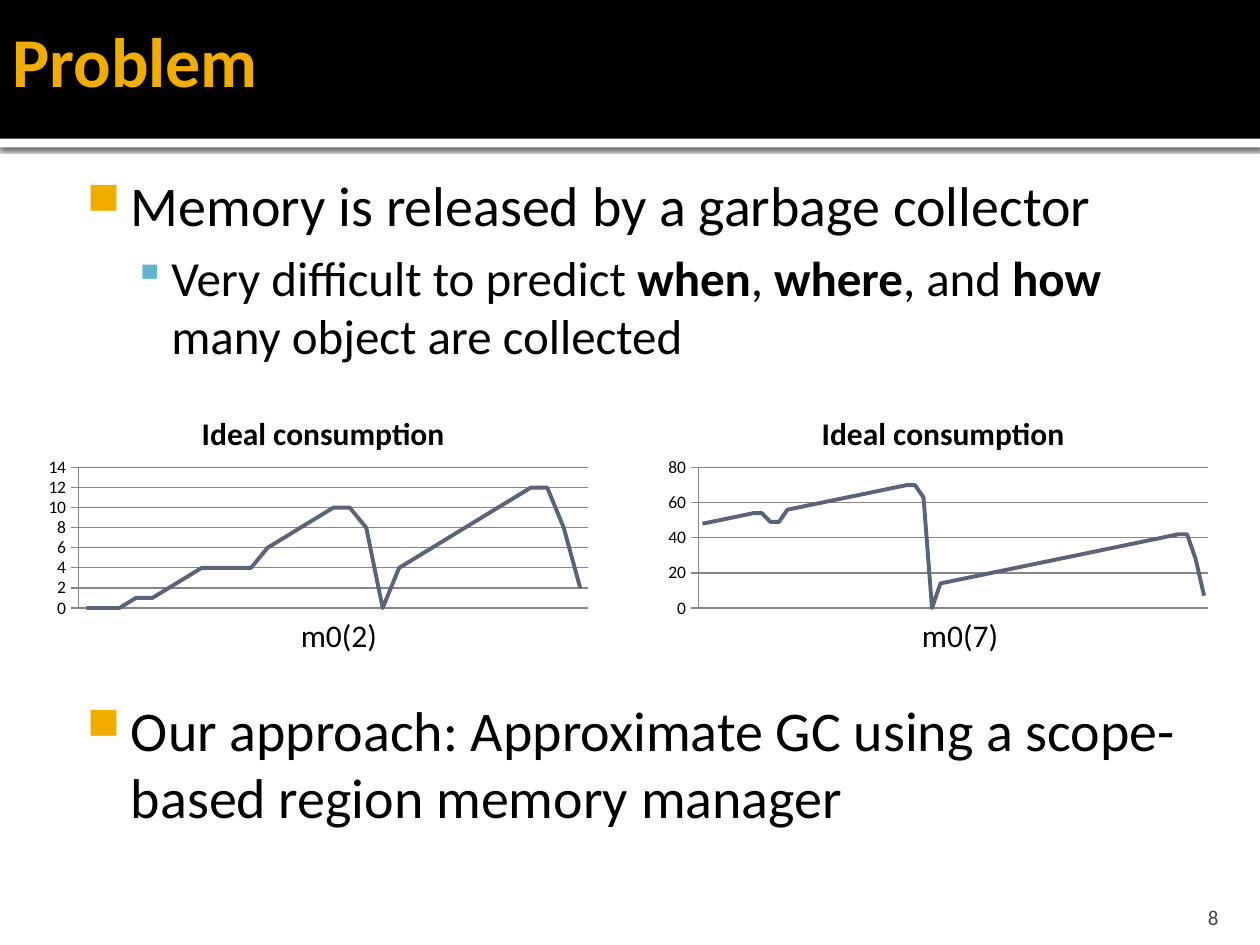
import pptx
import pptx.chart.data
import pptx.dml.color
import pptx.enum.chart
import pptx.enum.shapes
import pptx.enum.text
import pptx.oxml
import pptx.oxml.ns
import pptx.util

Inches, Pt = pptx.util.Inches, pptx.util.Pt
ALIGN = pptx.enum.text.PP_ALIGN
ANCHOR = pptx.enum.text.MSO_ANCHOR
FONT = "Calibri"
BLACK, WHITE, GOLD, BLUE = "000000", "FFFFFF", "F0AD00", "60B5CC"
SLATE, GRID, GREY = "5A6378", "868686", "454545"

# Content: runs are (text, bold)
TITLE, NUMBER = "Problem", "8"
BULLETS = [
    {"level": 0, "before": 0,
     "runs": [("Memory is released by a garbage collector", False)]},
    {"level": 1, "before": 5.6,
     "runs": [("Very difficult to predict ", False), ("when", True), (", ", False),
              ("where", True), (", and ", False), ("how", True),
              (" many object are collected", False)]},
    {"level": 0, "before": 189,
     "runs": [("Our approach: Approximate GC using a scope-based region memory manager",
               False)]},
]
LEVELS = [
    {"size": 32, "margin": 0.48, "indent": -0.35, "mark": "■", "color": GOLD, "scale": 80},
    {"size": 28, "margin": 0.8, "indent": -0.3, "mark": "▪", "color": BLUE, "scale": 90},
]
CHART_TITLE = "Ideal consumption"
CHARTS = [
    {"caption": "m0(2)", "left": 0.31, "caption_left": 0.62, "top_value": 14, "step": 2,
     "values": [0, 0, 0, 1, 1, 2, 3, 4, 4, 4, 4, *range(6, 11), 10, 8, 0,
                *range(4, 13), 12, 8, 2]},
    {"caption": "m0(7)", "left": 5.23, "caption_left": 5.55, "top_value": 80, "step": 20,
     "values": [*range(48, 55), 54, 49, 49, *range(56, 71), 70, 63, 0,
                *range(14, 43), 42, 28, 7]},
]


def color(value):
    return pptx.dml.color.RGBColor.from_string(value)


def xml(text):
    tag_end = min(text.index(mark) for mark in " />" if mark in text)
    names = pptx.oxml.ns.nsdecls("a", "c")
    return pptx.oxml.parse_xml(f"{text[:tag_end]} {names}{text[tag_end:]}")


def style(font, size, ink=BLACK, bold=False):
    font.name, font.size, font.bold = FONT, Pt(size), bold
    font.color.rgb = color(ink)


def add_span(para, text, size, ink=BLACK, bold=False):
    span = para.add_run()
    span.text = text
    style(span.font, size, ink, bold)


def add_box(page, place, insets=(0.1, 0.05, 0.1, 0.05), anchor=ANCHOR.TOP):
    frame = page.shapes.add_textbox(*map(Inches, place)).text_frame
    frame.word_wrap = True
    frame.vertical_anchor = anchor
    (frame.margin_left, frame.margin_top,
     frame.margin_right, frame.margin_bottom) = map(Inches, insets)
    return frame


def add_bar(page, place, fill):
    bar = page.shapes.add_shape(pptx.enum.shapes.MSO_SHAPE.RECTANGLE, *map(Inches, place))
    bar.shadow.inherit = False
    bar.fill.solid()
    bar.fill.fore_color.rgb = color(fill)
    bar.line.fill.background()
    return bar


def add_bullet(para, item):
    level = LEVELS[item["level"]]
    para.level = item["level"]
    para.space_before = Pt(item["before"])
    settings = para._p.get_or_add_pPr()
    settings.set("marL", str(Inches(level["margin"])))
    settings.set("indent", str(Inches(level["indent"])))
    settings.append(xml(f'<a:buClr><a:srgbClr val="{level["color"]}"/></a:buClr>'))
    settings.append(xml(f'<a:buSzPct val="{level["scale"] * 1000}"/>'))
    settings.append(xml(f'<a:buChar char="{level["mark"]}"/>'))
    for text, bold in item["runs"]:
        add_span(para, text, level["size"], bold=bold)


def layout(inner=False, **fractions):
    target = '<c:layoutTarget val="inner"/>' if inner else ""
    modes = "".join(f'<c:{key}Mode val="edge"/>' for key in "xy")
    sizes = "".join(f'<c:{key} val="{value}"/>' for key, value in fractions.items())
    return xml(f"<c:layout><c:manualLayout>{target}{modes}{sizes}</c:manualLayout></c:layout>")


def set_layout(parent, new, position):
    for old in parent.findall(pptx.oxml.ns.qn("c:layout")):
        parent.remove(old)
    parent.insert(position, new)


def add_line_chart(page, item):
    data = pptx.chart.data.CategoryChartData()
    data.categories = [str(i + 1) for i in range(len(item["values"]))]
    data.add_series("Series 1", item["values"])
    place = (item["left"], 3.05, 4.45, 1.89)
    chart = page.shapes.add_chart(
        pptx.enum.chart.XL_CHART_TYPE.LINE, *map(Inches, place), data).chart
    style(chart.font, 10)
    chart.has_legend = False
    chart.has_title = True
    add_span(chart.chart_title.text_frame.paragraphs[0], CHART_TITLE, 18, bold=True)
    chart.chart_title.include_in_layout = False
    set_layout(chart.chart_title._element, layout(x=0.28, y=0.09), 1)
    set_layout(chart._chartSpace.chart.plotArea,
               layout(inner=True, x=0.07, y=0.35, w=0.91, h=0.59), 0)

    # Axes
    chart.category_axis.visible = False
    axis = chart.value_axis
    axis.minimum_scale, axis.maximum_scale = 0, item["top_value"]
    axis.major_unit = item["step"]
    axis.major_tick_mark = pptx.enum.chart.XL_TICK_MARK.CROSS
    axis.has_major_gridlines = True
    for line in (axis.format.line, axis.major_gridlines.format.line):
        line.color.rgb = color(GRID)
        line.width = Pt(0.75)

    # Series
    chart.plots[0].vary_by_categories = False
    series = chart.plots[0].series[0]
    series.smooth = False
    series.marker.style = pptx.enum.chart.XL_MARKER_STYLE.NONE
    series.format.line.color.rgb = color(SLATE)
    series.format.line.width = Pt(2.25)


def main():
    deck = pptx.Presentation()
    deck.slide_width, deck.slide_height = Inches(10), Inches(7.5)
    page = deck.slides.add_slide(deck.slide_layouts[6])

    # Header band with a shadowed white strip
    strip = add_bar(page, (0, 1.09, 10, 0.08), WHITE)
    strip._element.spPr.find(pptx.oxml.ns.qn("a:effectLst")).append(xml(
        f'<a:outerShdw blurRad="{Pt(2.5)}" dist="{Pt(0.8)}" dir="5400000">'
        f'<a:srgbClr val="{BLACK}"><a:alpha val="60000"/></a:srgbClr></a:outerShdw>'))
    add_bar(page, (0, 0, 10, 1.1), BLACK)
    title = add_box(page, (0, 0.08, 10, 0.78), (0.1, 0.05, 0.05, 0.05), ANCHOR.MIDDLE)
    add_span(title.paragraphs[0], TITLE, 40, GOLD, True)

    # Bullets, with room for the charts before the last one
    body = add_box(page, (0.5, 1.25, 9, 5.75), (0.06, 0.1, 0.1, 0.05))
    for index, item in enumerate(BULLETS):
        add_bullet(body.add_paragraph() if index else body.paragraphs[0], item)

    # Charts and captions
    for item in CHARTS:
        add_line_chart(page, item)
        caption = add_box(page, (item["caption_left"], 4.84, 4.14, 0.4)).paragraphs[0]
        caption.alignment = ALIGN.CENTER
        add_span(caption, item["caption"], 18)

    # Slide number
    number = add_box(page, (8.97, 7.08, 0.8, 0.3), (0.1, 0.05, 0.1, 0), ANCHOR.BOTTOM)
    number.paragraphs[0].alignment = ALIGN.RIGHT
    add_span(number.paragraphs[0], NUMBER, 12, GREY)

    deck.save("out.pptx")


if __name__ == "__main__":
    main()
